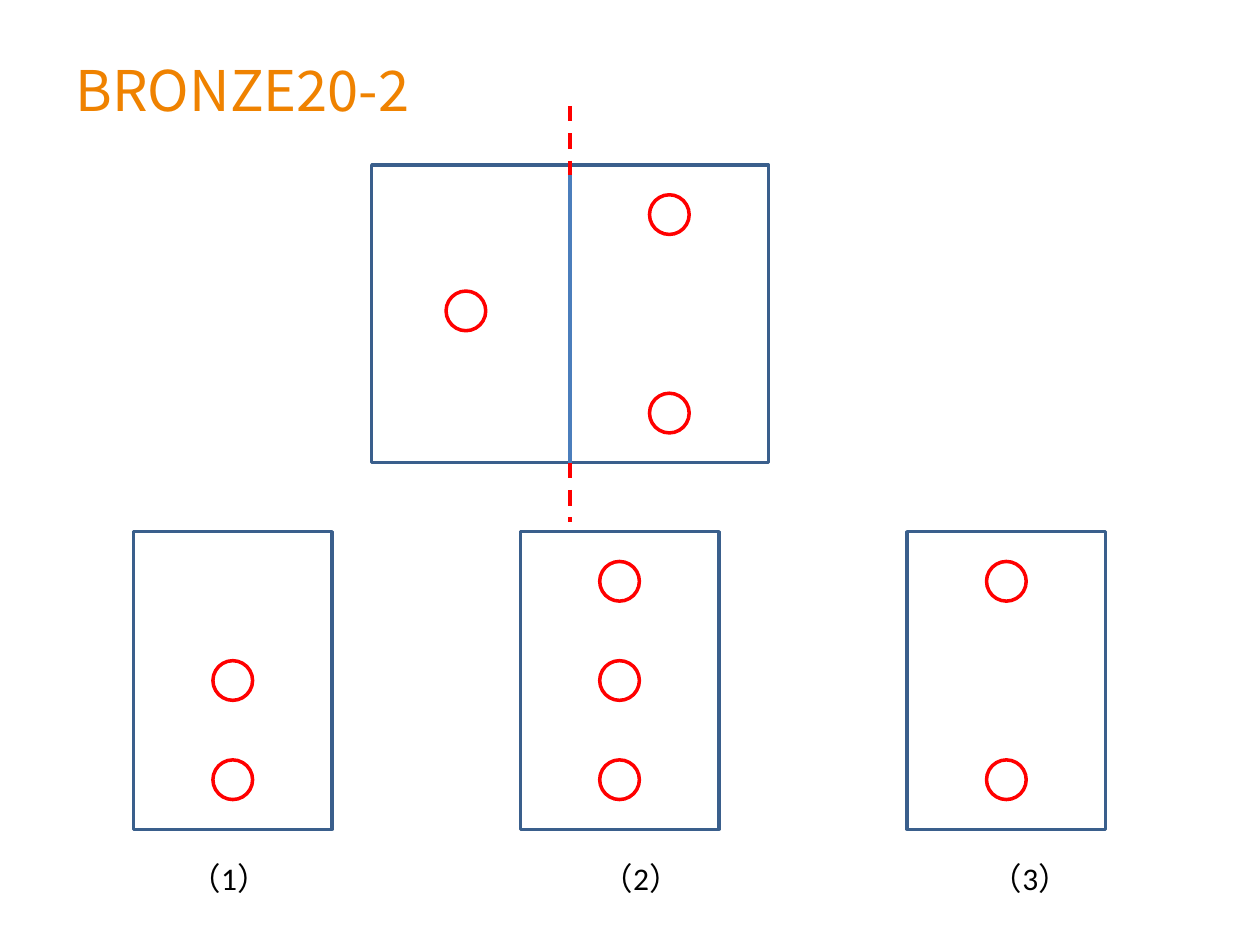
import pptx
import pptx.util
import pptx.dml.color
import pptx.enum.dml
import pptx.enum.shapes
import pptx.enum.text
from lxml import etree

deck = pptx.Presentation()
deck.slide_width, deck.slide_height = pptx.util.Inches(10), pptx.util.Inches(7.5)
slide = deck.slides.add_slide(deck.slide_layouts[5])

inch = pptx.util.Inches
kinds = pptx.enum.shapes.MSO_SHAPE
UNIT = 0.105 * 7.5  # one grid square
DOT = 0.4 * UNIT
NAVY, BLUE, RED, ORANGE, BLACK = "3A5F8C", "4B7EBC", "FF0000", "EF8200", "000000"


def colour(code):
    return pptx.dml.color.RGBColor.from_string(code)


def write(holder, text, size=18, font="Calibri", shade=BLACK):
    frame = holder.text_frame
    frame.word_wrap = True
    frame.auto_size = pptx.enum.text.MSO_AUTO_SIZE.NONE
    frame.vertical_anchor = pptx.enum.text.MSO_ANCHOR.MIDDLE
    paragraph = frame.paragraphs[0]
    paragraph.alignment = pptx.enum.text.PP_ALIGN.LEFT
    run = paragraph.add_run()
    run.text = text
    run.font.size = pptx.util.Pt(size)
    run.font.name = font
    run.font.color.rgb = colour(shade)
    east_asian = etree.SubElement(run.font._element, pptx.oxml.ns.qn("a:ea"))
    east_asian.set("typeface", "Noto Sans CJK SC")
    return paragraph


# Title
title = slide.shapes.title
title.left, title.top, title.width, title.height = map(inch, (0.5, 0.08, 9, 1.25))
write(title, "BRONZE20-2", size=32, font="Noto Sans CJK SC", shade=ORANGE)

# Panels: left, top, width in squares, dot centres as (column, row)
panels = [
    (2.95, 1.31, 4, [(3, 0.5), (3, 2.5), (0.95, 1.47)]),
    (1.06, 4.22, 2, [(1, 2.5), (1, 1.5)]),
    (4.13, 4.22, 2, [(1, 0.5), (1, 2.5), (1, 1.5)]),
    (7.20, 4.22, 2, [(1, 0.5), (1, 2.5)]),
]
frames = []
for left, top, columns, dots in panels:
    marks = [(kinds.RECTANGLE, left, top, columns * UNIT, 3 * UNIT, NAVY)]
    for column, row in dots:
        marks.append((kinds.OVAL, left + column * UNIT - DOT / 2,
                      top + row * UNIT - DOT / 2, DOT, DOT, RED))
    for kind, x, y, width, height, shade in marks:
        mark = slide.shapes.add_shape(kind, inch(x), inch(y), inch(width), inch(height))
        mark.shadow.inherit = False
        mark.fill.background()
        mark.line.color.rgb = colour(shade)
        mark.line.width = pptx.util.Pt(2)
        if kind == kinds.RECTANGLE:
            frames.append(mark)

# Fold line, then the solid divider that covers it inside the sheet
sheet = frames[0]
fold_x = sheet.left + sheet.width // 2
for start, end, shade, dashed in [(0.84, 4.14, RED, True), (1.39, 3.67, BLUE, False)]:
    fold = slide.shapes.add_connector(pptx.enum.shapes.MSO_CONNECTOR.STRAIGHT,
                                      fold_x, inch(start), fold_x, inch(end))
    fold.line.color.rgb = colour(shade)
    fold.line.width = pptx.util.Pt(2.25)
    if dashed:
        fold.line.dash_style = pptx.enum.dml.MSO_LINE.DASH
    else:
        fold.end_connect(sheet, 2)
    etree.SubElement(fold._element.spPr, pptx.oxml.ns.qn("a:effectLst"))

# Answer labels, one line with a centred tab stop per answer
answers = slide.shapes.add_textbox(inch(0.51), inch(6.66), inch(9), inch(0.61))
line = write(answers, "\t（1）\t（2）\t（3）")
stops = etree.SubElement(line._p.get_or_add_pPr(), pptx.oxml.ns.qn("a:tabLst"))
for centre in (1.82, 5.09, 8.18):
    stop = etree.SubElement(stops, pptx.oxml.ns.qn("a:tab"))
    stop.set("pos", str(inch(centre - 0.61)))
    stop.set("algn", "ctr")

deck.save("out.pptx")
